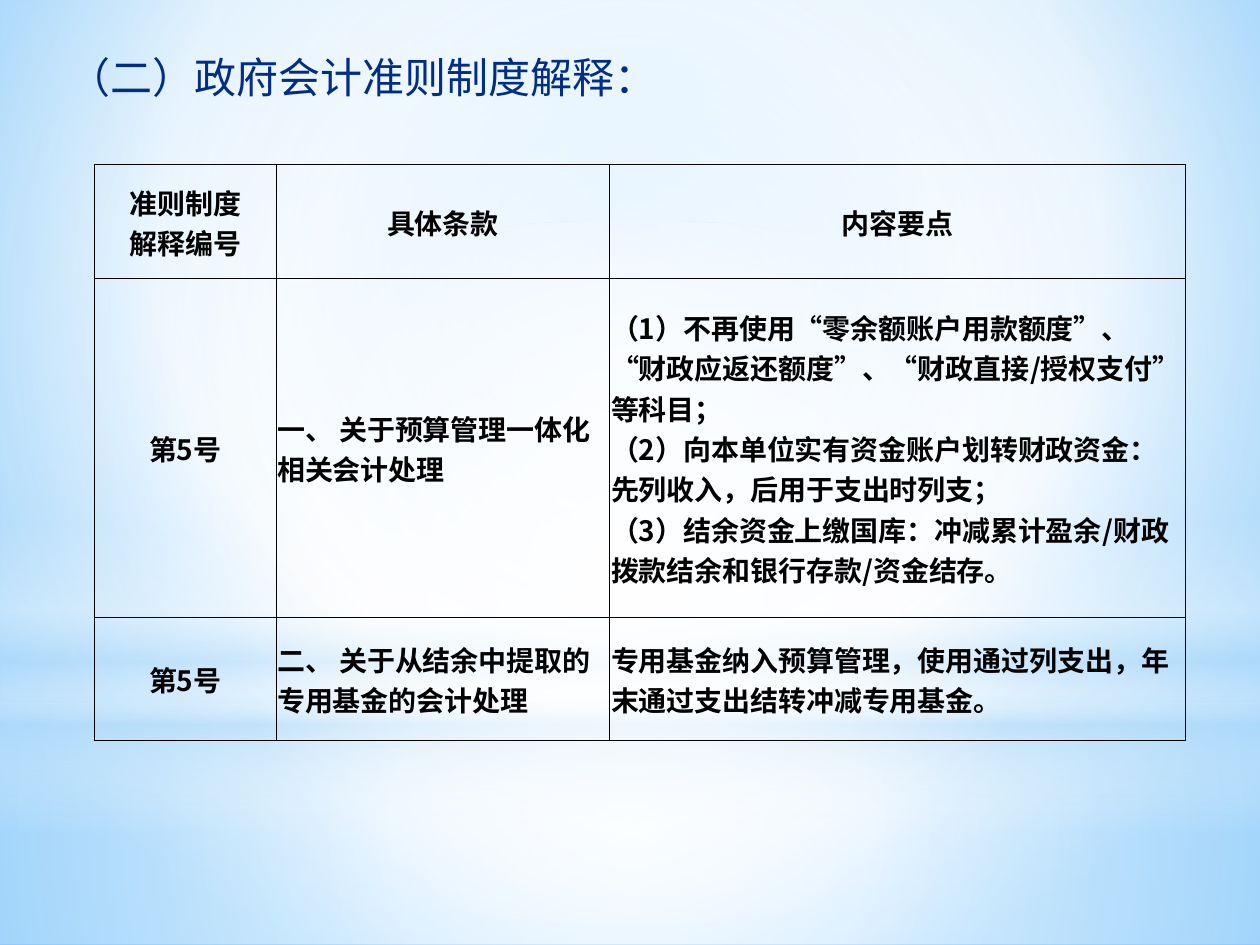
import pptx
import pptx.util
import pptx.dml.color
import pptx.enum.shapes
import pptx.enum.text
import pptx.oxml
import pptx.oxml.ns

Pt = pptx.util.Pt
RGB = pptx.dml.color.RGBColor
SHAPE = pptx.enum.shapes.MSO_SHAPE
ALIGN = pptx.enum.text.PP_ALIGN
ANCHOR = pptx.enum.text.MSO_ANCHOR
qn = pptx.oxml.ns.qn
NS = pptx.oxml.ns.nsdecls("a")

WHITE = RGB(0xFF, 0xFF, 0xFF)
BLACK = RGB(0x00, 0x00, 0x00)
NAVY = RGB(0x01, 0x2D, 0x86)
MIST = RGB(0xB4, 0xDC, 0xFA)
SKY = RGB(0x9E, 0xD5, 0xFF)
AZURE = RGB(0x5B, 0xB9, 0xFF)
FONT = "Noto Sans CJK SC"

CENTRE = (50, 50, 50, 50)
GLOWS = [
    (SHAPE.RECTANGLE, (0, 402, 720, 138), CENTRE,
     [(0, WHITE, 91), (37, WHITE, 76), (100, MIST, 79)]),
    (SHAPE.RECTANGLE, (0, 0, 720, 402), CENTRE,
     [(0, WHITE, 89), (48, WHITE, 62), (100, MIST, 79)]),
    (SHAPE.RECTANGLE, (0, 297, 720, 180), None,
     [(0, WHITE, 0), (29, WHITE, 30), (45, MIST, 40),
      (55, WHITE, 26), (65, MIST, 60), (100, WHITE, 0)]),
    (SHAPE.OVAL, (0, 126, 720, 402), CENTRE,
     [(0, WHITE, 100), (56, WHITE, 0)]),
]

COLS = [103.7, 190.8, 329]
ROWS = [65, 193.7, 70.5]
CELLS = [
    ["准则制度\n解释编号", "具体条款", "内容要点"],
    ["第5号", "一、 关于预算管理一体化相关会计处理",
     "（1）不再使用“零余额账户用款额度”、“财政应返还额度”、“财政直接/授权支付” 等科目；\n"
     "（2）向本单位实有资金账户划转财政资金：先列收入，后用于支出时列支；\n"
     "（3）结余资金上缴国库：冲减累计盈余/财政拨款结余和银行存款/资金结存。"],
    ["第5号", "二、 关于从结余中提取的专用基金的会计处理",
     "专用基金纳入预算管理，使用通过列支出，年末通过支出结转冲减专用基金。"],
]


def put_text(tf, text, size, color, bold=False, align=ALIGN.LEFT):
    """Write one formatted paragraph, with line breaks at newlines."""
    p = tf.paragraphs[0]
    p.text = text
    p.alignment = align
    for r in p.runs:
        r.font.size, r.font.bold, r.font.name = Pt(size), bold, FONT
        r.font.color.rgb = color
        rPr = r.font._element
        rPr.set("lang", "zh-CN")
        rPr.append(pptx.oxml.parse_xml(f'<a:ea {NS} typeface="{FONT}"/>'))


def set_gradient(fill, element, stops, focus=None):
    """Give an element a gradient, circular when a focus is given."""
    fill.solid()
    solid = element.find(".//" + qn("a:solidFill"))
    gs = "".join(
        f'<a:gs pos="{pos * 1000}"><a:srgbClr val="{color}">'
        f'<a:alpha val="{alpha * 1000}"/></a:srgbClr></a:gs>'
        for pos, color, alpha in stops)
    if focus:
        edges = " ".join(f'{k}="{v * 1000}"' for k, v in zip("ltrb", focus))
        way = f'<a:path path="circle"><a:fillToRect {edges}/></a:path>'
    else:
        way = '<a:lin ang="5400000" scaled="0"/>'
    solid.getparent().replace(solid, pptx.oxml.parse_xml(
        f'<a:gradFill {NS} rotWithShape="1"><a:gsLst>{gs}</a:gsLst>{way}</a:gradFill>'))


def add_backdrop(s):
    """Paint the background and its translucent glows."""
    set_gradient(s.background.fill, s.element,
                 [(0, SKY, 100), (60, WHITE, 100), (100, AZURE, 100)],
                 (20, 10, 20, 60))
    for kind, box, focus, stops in GLOWS:
        sp = s.shapes.add_shape(kind, *map(Pt, box))
        sp.shadow.inherit = False
        sp.line.fill.background()
        set_gradient(sp.fill, sp.element, stops, focus)


def add_title(s, left, top, width, height):
    """Place the heading in the title placeholder, above the backdrop."""
    sp = s.shapes.title
    sp.left, sp.top, sp.width, sp.height = map(Pt, (left, top, width, height))
    tf = sp.text_frame
    tf.word_wrap = True
    tf.auto_size = pptx.enum.text.MSO_AUTO_SIZE.SHAPE_TO_FIT_TEXT
    tf.vertical_anchor = ANCHOR.TOP
    put_text(tf, "（二）政府会计准则制度解释：", 24, NAVY)
    s.shapes._spTree.append(sp.element)


def style_cell(cell):
    """Clear the fill, tighten the margins and draw thin borders."""
    cell.fill.background()
    cell.vertical_anchor = ANCHOR.MIDDLE
    cell.margin_left = cell.margin_right = cell.margin_top = Pt(0.7)
    cell.margin_bottom = Pt(0)
    tcPr = cell._tc.get_or_add_tcPr()
    for i, side in enumerate("LRTB"):
        tcPr.insert(i, pptx.oxml.parse_xml(
            f'<a:ln{side} {NS} w="{Pt(0.5)}"><a:solidFill>'
            f'<a:srgbClr val="{BLACK}"/></a:solidFill></a:ln{side}>'))


def add_rules_table(s, left, top):
    """Place the table of interpretations, clauses and key points."""
    frame = s.shapes.add_table(len(ROWS), len(COLS), Pt(left), Pt(top),
                               Pt(sum(COLS)), Pt(sum(ROWS)))
    table = frame.table
    table.horz_banding = False
    for col, width in zip(table.columns, COLS):
        col.width = Pt(width)
    for i, (row, height) in enumerate(zip(table.rows, ROWS)):
        row.height = Pt(height)
        for j, cell in enumerate(row.cells):
            style_cell(cell)
            align = ALIGN.CENTER if i == 0 or j == 0 else ALIGN.LEFT
            put_text(cell.text_frame, CELLS[i][j], 16, BLACK, bold=True, align=align)


def main():
    """Build and save the slide."""
    prs = pptx.Presentation()
    prs.slide_width, prs.slide_height = Pt(720), Pt(540)
    s = prs.slides.add_slide(prs.slide_layouts[5])
    add_backdrop(s)
    add_title(s, 31.7, 26, 354, 36)
    add_rules_table(s, 54, 94)
    prs.save("out.pptx")


if __name__ == "__main__":
    main()
